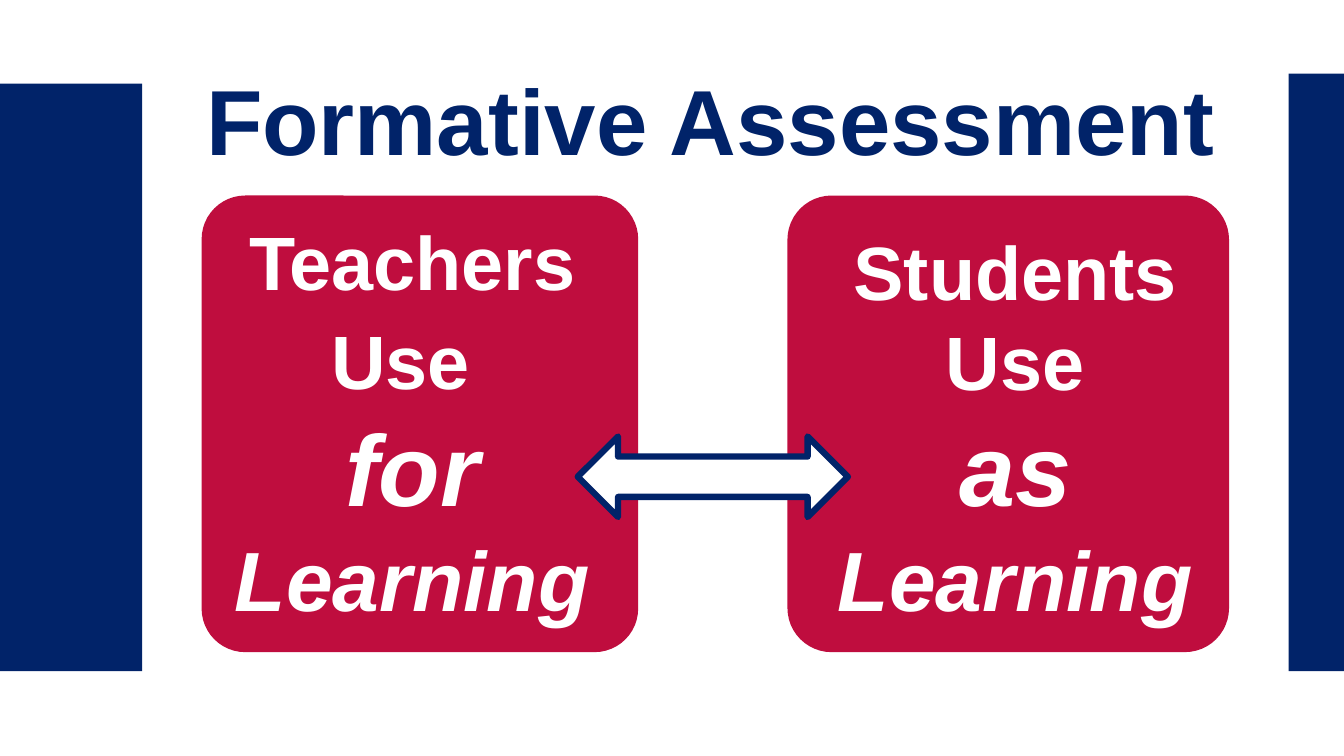
import pptx
import pptx.util
import pptx.dml.color
import pptx.enum.shapes
import pptx.enum.text

Inches = pptx.util.Inches
Pt = pptx.util.Pt
RGBColor = pptx.dml.color.RGBColor
KIND = pptx.enum.shapes.MSO_SHAPE

NAVY = RGBColor(0x01, 0x23, 0x69)
RED = RGBColor(0xBF, 0x0D, 0x3E)
WHITE = RGBColor(0xFF, 0xFF, 0xFF)

deck = pptx.Presentation()
deck.slide_width = Inches(13.33)
deck.slide_height = Inches(7.5)
slide = deck.slides.add_slide(deck.slide_layouts[6])


def add_block(kind, box, color):
    """Add a filled shape without outline or shadow."""
    block = slide.shapes.add_shape(kind, *[Inches(n) for n in box])
    block.shadow.inherit = False
    block.fill.solid()
    block.fill.fore_color.rgb = color
    block.line.fill.background()
    return block


def write(shape, lines, color):
    """Fill a shape with centred paragraphs of (text, size, italic) runs."""
    frame = shape.text_frame
    frame.word_wrap = True
    frame.vertical_anchor = pptx.enum.text.MSO_ANCHOR.TOP
    for i, line in enumerate(lines):
        para = frame.add_paragraph() if i else frame.paragraphs[0]
        para.alignment = pptx.enum.text.PP_ALIGN.CENTER
        for text, size, slant in line:
            run = para.add_run()
            run.text = text
            run.font.name = "Arial"
            run.font.size = Pt(size)
            run.font.bold = True
            run.font.italic = slant
            run.font.color.rgb = color


# Cards: card box, text box, lines
cards = [
    ((2, 1.94, 4.33, 4.53), (2.14, 2.08, 3.9, 4.24),
     [[("Teachers Use", 54, False), (" ", 60, False)],
      [("for", 72, True)],
      [("Learning", 60, True)]]),
    ((7.81, 1.94, 4.38, 4.53), (8.19, 2.18, 3.76, 4.14),
     [[("Students Use", 54, False)],
      [("as ", 72, True), ("Learning", 60, True)]]),
]
for box, area, lines in cards:
    card = add_block(KIND.ROUNDED_RECTANGLE, box, RED)
    card.adjustments[0] = 0.1
    label = slide.shapes.add_textbox(*[Inches(n) for n in area])
    write(label, lines, WHITE)

# Arrow between the cards
arrow = add_block(KIND.LEFT_RIGHT_ARROW, (5.73, 4.33, 2.68, 0.8), WHITE)
arrow.line.color.rgb = NAVY
arrow.line.width = Pt(4.5)

# Title
title = add_block(KIND.RECTANGLE, (1.9, 0.58, 10.29, 1.21), WHITE)
write(title, [[("Formative Assessment", 66, False)]], NAVY)

# Side bars
for box in [(0, 0.83, 1.41, 5.83), (12.78, 0.73, 0.55, 5.93)]:
    add_block(KIND.RECTANGLE, box, NAVY)

deck.save("out.pptx")
